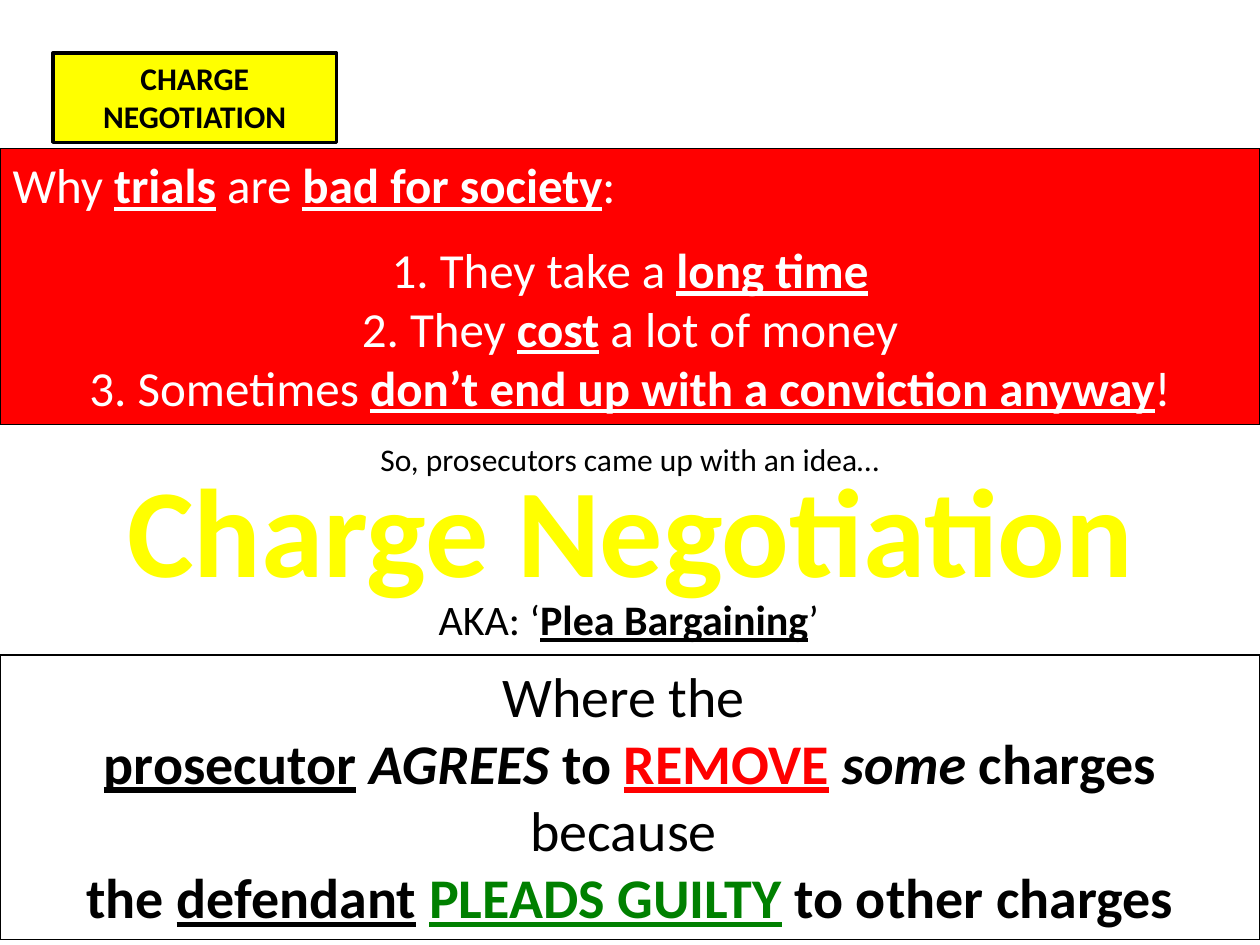
from lxml.etree import SubElement as Sub
from pptx import Presentation
from pptx.dml.color import RGBColor as Rgb
from pptx.enum.shapes import MSO_SHAPE as Kind
from pptx.enum.text import MSO_ANCHOR as Anchor, MSO_AUTO_SIZE as Auto, PP_ALIGN as Align
from pptx.oxml.ns import qn
from pptx.util import Inches, Pt

WIDE, HIGH = Inches(10), Inches(7.5)
FONT = "Calibri"
BLACK = Rgb(0, 0, 0)
WHITE = Rgb(255, 255, 255)
YELLOW = Rgb(255, 255, 0)
RED = Rgb(255, 0, 0)
GREEN = Rgb(0, 128, 0)


def span(left, top, width, height):
    """Turn percent shares of the slide into lengths."""
    return [round(share * side / 100) for share, side in
            zip((left, top, width, height), (WIDE, HIGH) * 2)]


def place(shape, area):
    shape.left, shape.top, shape.width, shape.height = span(*area)
    return shape


def style(shape, fill=None, width=0.75):
    if fill is None:
        shape.fill.background()
    else:
        shape.fill.solid()
        shape.fill.fore_color.rgb = fill
    shape.line.color.rgb = BLACK
    shape.line.width = Pt(width)
    return shape


def add_box(slide, area, fill=None, width=0.75):
    box = slide.shapes.add_shape(Kind.RECTANGLE, *span(*area))
    box.shadow.inherit = False
    return style(box, fill, width)


def add_note(slide, area):
    return slide.shapes.add_textbox(*span(*area))


def edge(run):
    line = run.font.line
    line.color.rgb = BLACK
    line.width = Pt(0.75)


def write(shape, *lines, size, color=BLACK, align=Align.CENTER, gap=0):
    """Each line lists runs: text, marks among b, i, u, and maybe a colour."""
    frame = shape.text_frame
    frame.word_wrap = True
    frame.auto_size = Auto.NONE
    frame.vertical_anchor = Anchor.TOP
    for row, line in enumerate(lines):
        para = frame.paragraphs[0] if row == 0 else frame.add_paragraph()
        para.alignment = align
        para.space_before = Pt(gap if row == 1 else 0)
        props = para._p.get_or_add_pPr()
        props.set("marL", "0")
        props.set("indent", "0")
        Sub(props, qn("a:buNone"))
        for text, marks, *tint in line:
            run = para.add_run()
            run.text = text
            font = run.font
            font.name, font.size = FONT, Pt(size)
            font.bold, font.italic = "b" in marks, "i" in marks
            font.underline = "u" in marks
            font.color.rgb = tint[0] if tint else color
    return frame


def add_label(slide):
    box = add_box(slide, (4.2, 5.6, 22.5, 9.47), YELLOW, 2)
    write(box, [("CHARGE NEGOTIATION", "b")], size=18)


def add_title(slide):
    title = place(slide.shapes.title, (0.1, 47.07, 99.9, 17.73))
    frame = write(title, [("Charge Negotiation", "b")], size=72, color=YELLOW)
    props = frame.paragraphs[0].runs[0].font._element
    line = Sub(props, qn("a:ln"), w=str(Pt(0.75)))
    fill = Sub(line, qn("a:solidFill"))
    Sub(fill, qn("a:srgbClr"), val=str(BLACK))
    props.insert(0, line)


def add_reasons(slide):
    body = style(place(slide.placeholders[1], (0, 15.73, 100, 29.2)), RED)
    frame = write(
        body,
        [("Why ", ""), ("trials", "bu"), (" are ", ""),
         ("bad for society", "bu"), (":", "")],
        [("1. They take a ", ""), ("long time", "bu")],
        [("2. They ", ""), ("cost", "bu"), (" a lot of money", "")],
        [("3. Sometimes ", ""),
         ("don’t end up with a conviction anyway", "bu"), ("!", "")],
        size=28, color=WHITE, gap=14.6)
    frame.paragraphs[0].alignment = Align.LEFT


def add_meaning(slide):
    write(
        add_box(slide, (0, 69.33, 100, 30.13)),
        [("Where the ", "")],
        [("prosecutor", "bu"), (" ", "b"), ("AGREES ", "bi"), ("to ", "b"),
         ("REMOVE", "bu", RED), (" ", "b"), ("some", "bi"), (" charges", "b")],
        [("because ", "")],
        [("the ", "b"), ("defendant", "bu"), (" ", "b"),
         ("PLEADS GUILTY", "bu", GREEN), (" to other charges", "b")],
        size=32)


def main():
    deck = Presentation()
    deck.slide_width, deck.slide_height = WIDE, HIGH
    slide = deck.slides.add_slide(deck.slide_layouts[1])
    add_label(slide)
    add_title(slide)
    add_reasons(slide)
    write(add_note(slide, (0, 45.87, 100, 5.33)),
          [("So, prosecutors came up with an idea…", "")], size=18)
    add_meaning(slide)
    write(add_note(slide, (-0.2, 62.13, 100.2, 6.67)),
          [("AKA: ‘", ""), ("Plea Bargaining", "bu"), ("’", "")], size=24)
    deck.save("out.pptx")


if __name__ == "__main__":
    main()
